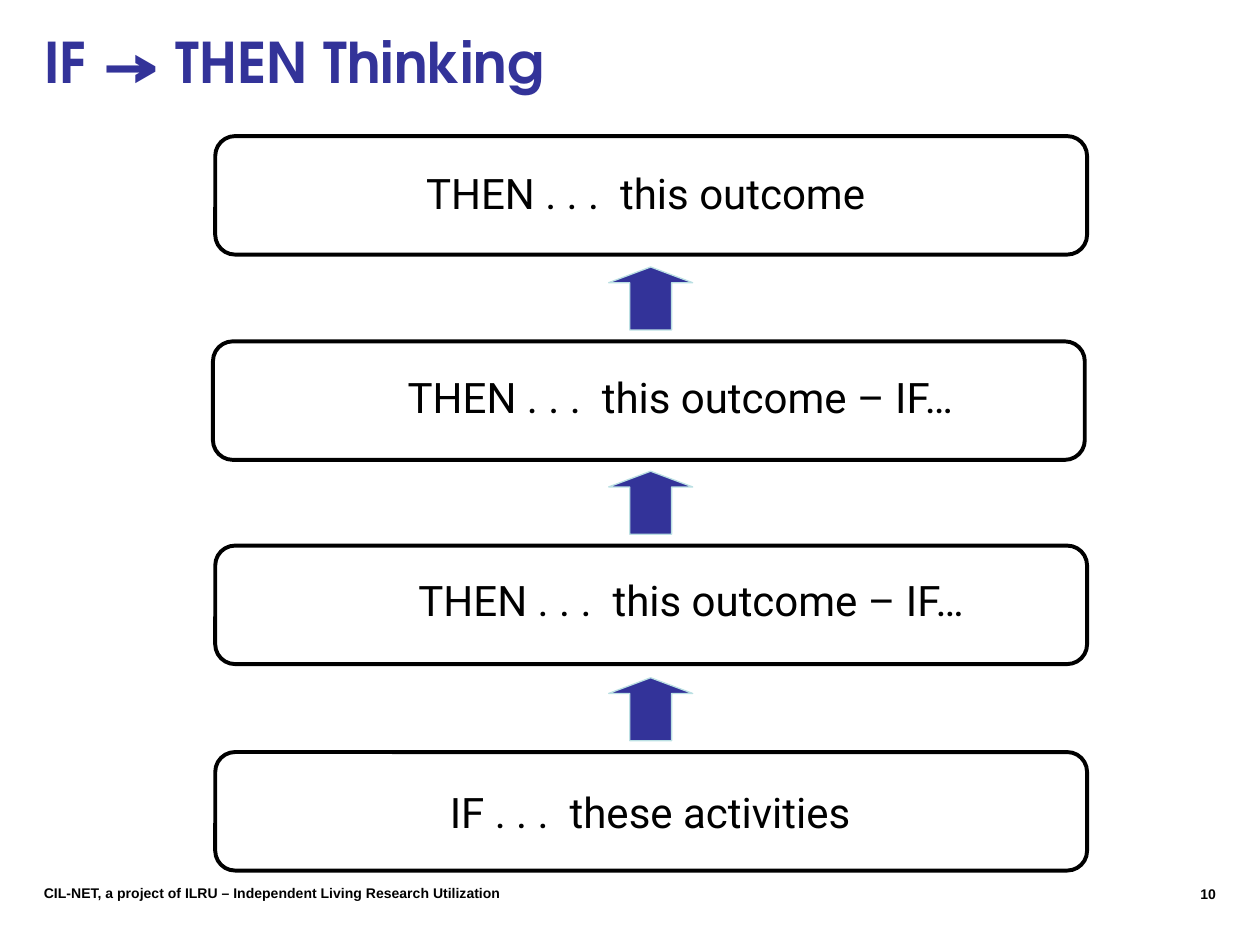
from pptx import Presentation
from pptx.dml.color import RGBColor
from pptx.enum.shapes import MSO_SHAPE as Shape
from pptx.enum.text import MSO_ANCHOR as Anchor, MSO_AUTO_SIZE as AutoSize, PP_ALIGN as Align
from pptx.util import Pt

COLORS = {"ink": "000000", "accent": "333399", "arrow edge": "BBE0E3"}

TITLE = "IF → THEN Thinking"
FOOTER = "CIL-NET, a project of ILRU – Independent Living Research Utilization"
PAGE_NUMBER = "10"

# Top to bottom: text, box left, box top, then label left, top and width
STEPS = [
    ("THEN . . .  this outcome ", 123, 77.8, 200.9, 92.2, 342),
    ("THEN . . .  this outcome – IF…", 121.7, 195.1, 207.4, 208.8, 362.9),
    ("THEN . . .  this outcome – IF…", 123, 311.8, 207.4, 324.7, 375.1),
    ("IF . . .  these activities", 123, 429.8, 224.6, 445.7, 293.8),
]
BOX_WIDTH, BOX_HEIGHT = 498.2, 67.7
LABEL_HEIGHT = 36.7
ARROW_LEFT, ARROW_WIDTH, ARROW_HEIGHT = 347.8, 48, 36
ARROW_GAP = 6.5

TITLE_FONT = {"name": "TeX Gyre Adventor", "size": Pt(32), "bold": True}
LABEL_FONT = {"name": "Roboto", "size": Pt(24), "bold": False}
FOOTER_FONT = {"name": "Arial", "size": Pt(8), "bold": True}


def rgb(name):
    return RGBColor.from_string(COLORS[name])


def write(box, text, font, color="ink", align=Align.LEFT):
    frame = box.text_frame
    frame.word_wrap = True
    frame.auto_size = AutoSize.NONE
    frame.vertical_anchor = Anchor.TOP
    para = frame.paragraphs[0]
    para.alignment = align
    span = para.add_run()
    span.text = text
    for key, value in font.items():
        setattr(span.font, key, value)
    span.font.color.rgb = rgb(color)


def add_text(page, area, text, font, align=Align.LEFT):
    write(page.shapes.add_textbox(*map(Pt, area)), text, font, align=align)


def add_outline(page, kind, area, adjustments, edge, weight, fill=None):
    shape = page.shapes.add_shape(kind, *map(Pt, area))
    shape.shadow.inherit = False
    for index, value in enumerate(adjustments):
        shape.adjustments[index] = value
    if fill:
        shape.fill.solid()
        shape.fill.fore_color.rgb = rgb(fill)
    else:
        shape.fill.background()
    shape.line.color.rgb = rgb(edge)
    shape.line.width = Pt(weight)


def main():
    deck = Presentation()
    deck.slide_width, deck.slide_height = Pt(720), Pt(540)
    page = deck.slides.add_slide(deck.slide_layouts[5])

    title = page.shapes.title
    title.left, title.top, title.width, title.height = map(Pt, (18, 12.2, 642.2, 46.1))
    write(title, TITLE, TITLE_FONT, "accent")

    for index, (text, left, top, label_left, label_top, label_width) in enumerate(STEPS):
        add_outline(page, Shape.ROUNDED_RECTANGLE, (left, top, BOX_WIDTH, BOX_HEIGHT),
                    [0.167], "ink", 2.25)
        add_text(page, (label_left, label_top, label_width, LABEL_HEIGHT),
                 text, LABEL_FONT, Align.CENTER)
        if index:
            arrow_top = top - ARROW_GAP - ARROW_HEIGHT
            add_outline(page, Shape.UP_ARROW,
                        (ARROW_LEFT, arrow_top, ARROW_WIDTH, ARROW_HEIGHT),
                        [0.5, 0.25], "arrow edge", 0.75, "accent")

    add_text(page, (18, 501.8, 360, 16.6), FOOTER, FOOTER_FONT)
    add_text(page, (653.8, 502.6, 48.2, 19.4), PAGE_NUMBER, FOOTER_FONT, Align.RIGHT)
    deck.save("out.pptx")


if __name__ == "__main__":
    main()
